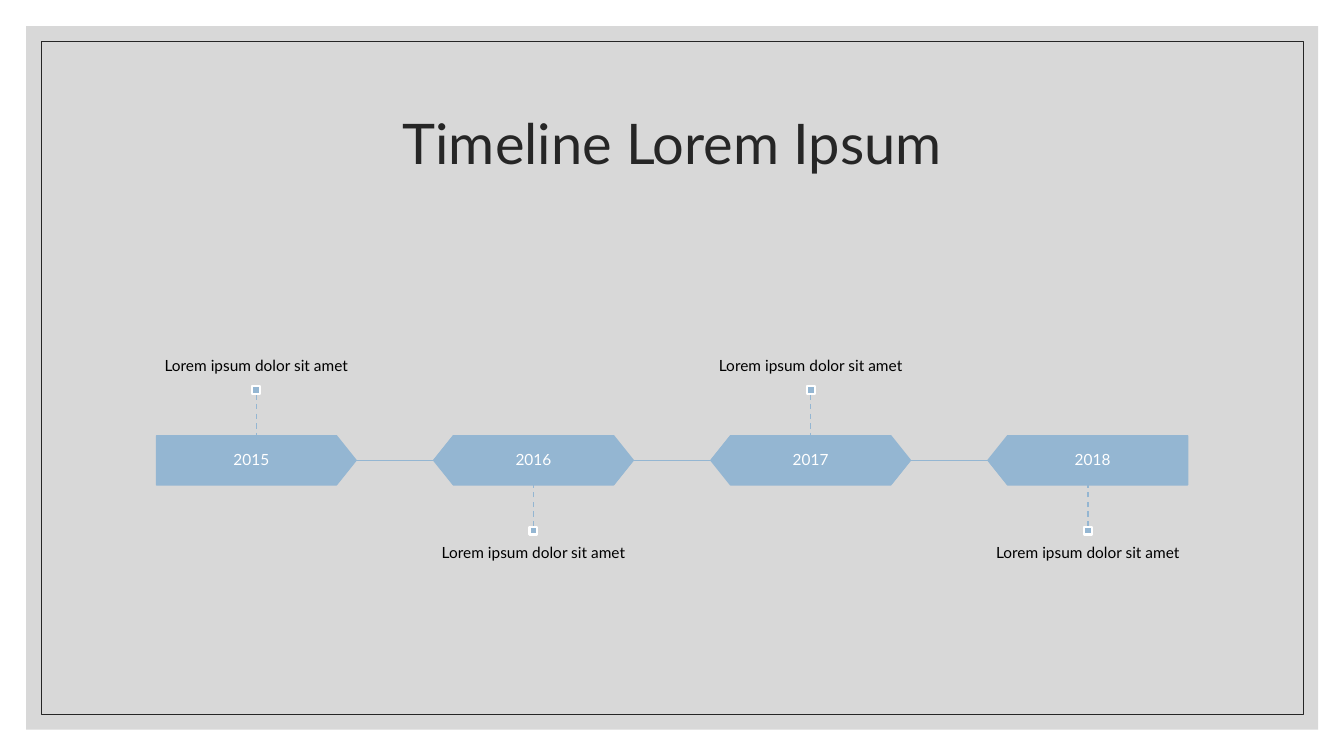
"""Build a four-year timeline slide with labels alternating above and below."""
from lxml import etree
from pptx import Presentation
from pptx.dml.color import RGBColor
from pptx.enum import dml, shapes, text
from pptx.oxml import ns
from pptx.util import Cm, Pt

TITLE = "Timeline Lorem Ipsum"
UP, DOWN = -1, 1
MILESTONES = [
    ("2015", "Lorem ipsum dolor sit amet", UP),
    ("2016", "Lorem ipsum dolor sit amet", DOWN),
    ("2017", "Lorem ipsum dolor sit amet", UP),
    ("2018", "Lorem ipsum dolor sit amet", DOWN),
]
FONT = "Lato"
BLUE, WHITE, BLACK, DARK, GRAY = "94B6D2", "FFFFFF", "000000", "262626", "D8D8D8"

FIRST_CENTER, PITCH, AXIS = 6.46, 6.985, 11.6
BAR_WIDTH, BAR_HEIGHT = 5.03, 1.24
MARKER, MARKER_OFFSET = 0.2, 1.77
LABEL_HEIGHT, LABEL_OFFSET = 3.3, 1.87


def paint(color_format, color):
    color_format.rgb = RGBColor.from_string(color)


def set_line(line, color, width):
    line.width = Pt(width)
    paint(line.color, color)


def add_box(slide, kind, box, fill=None, line=None, width=1):
    shape = slide.shapes.add_shape(kind, *map(Cm, box))
    shape.shadow.inherit = False
    if fill:
        shape.fill.solid()
        paint(shape.fill.fore_color, fill)
    else:
        shape.fill.background()
    if line:
        set_line(shape.line, line, width)
    else:
        shape.line.fill.background()
    return shape


def write(shape, words, size, color, anchor, margin_x, margin_y):
    frame = shape.text_frame
    frame.text = words
    settings = {
        "word_wrap": True, "auto_size": text.MSO_AUTO_SIZE.NONE, "vertical_anchor": anchor,
        "margin_left": Cm(margin_x), "margin_right": Cm(margin_x),
        "margin_top": Cm(margin_y), "margin_bottom": Cm(margin_y),
    }
    for name, value in settings.items():
        setattr(frame, name, value)
    paragraph = frame.paragraphs[0]
    paragraph.alignment = text.PP_ALIGN.CENTER
    paragraph.line_spacing = 0.9
    font = paragraph.runs[0].font
    for name, value in {"name": FONT, "size": Pt(size)}.items():
        setattr(font, name, value)
    paint(font.color, color)


def add_line(slide, start, end, dash=None):
    connector = slide.shapes.add_connector(
        shapes.MSO_CONNECTOR.STRAIGHT, *map(Cm, start + end))
    set_line(connector.line, BLUE, 1)
    if dash:
        connector.line.dash_style = dash
    etree.SubElement(connector._element.spPr, ns.qn("a:effectLst"))


def add_milestone(slide, index, year, label, side):
    center = FIRST_CENTER + index * PITCH
    left = center - BAR_WIDTH / 2
    last = len(MILESTONES) - 1
    kinds = shapes.MSO_SHAPE
    kind = kinds.PENTAGON if index in (0, last) else kinds.HEXAGON
    bar = add_box(slide, kind, (left, AXIS - BAR_HEIGHT / 2, BAR_WIDTH, BAR_HEIGHT), BLUE, BLUE)
    bar.adjustments[0] = 0.4
    if index == last:
        bar._element.spPr.xfrm.set("flipH", "1")
    write(bar, year, 11, WHITE, text.MSO_ANCHOR.MIDDLE, 0.23, 0.23)
    if index < last:
        add_line(slide, (left + BAR_WIDTH, AXIS), (left + PITCH, AXIS))

    marker_middle = AXIS + side * MARKER_OFFSET
    add_line(slide, (center, marker_middle - side * MARKER / 2),
             (center, AXIS + side * BAR_HEIGHT / 2), dml.MSO_LINE.DASH)
    add_box(slide, kinds.RECTANGLE,
            (center - MARKER / 2, marker_middle - MARKER / 2, MARKER, MARKER), BLUE, WHITE, 1.5)

    label_edge = AXIS + side * LABEL_OFFSET
    label_top = label_edge - LABEL_HEIGHT if side == UP else label_edge
    box = slide.shapes.add_textbox(
        *map(Cm, (center - PITCH / 2, label_top, PITCH, LABEL_HEIGHT)))
    anchor = text.MSO_ANCHOR.BOTTOM if side == UP else text.MSO_ANCHOR.TOP
    write(box, label, 11, BLACK, anchor, 0, 0.28)


def main():
    presentation = Presentation()
    presentation.slide_width, presentation.slide_height = Cm(33.87), Cm(19.05)
    slide = presentation.slides.add_slide(presentation.slide_layouts[5])

    rectangle = shapes.MSO_SHAPE.RECTANGLE
    add_box(slide, rectangle, (0.66, 0.66, 32.56, 17.73), fill=GRAY)
    add_box(slide, rectangle, (1.04, 1.04, 31.8, 16.97), line=DARK, width=0.5)

    title = slide.shapes.title
    slide.shapes._spTree.append(title._element)
    frame = {"left": 2.97, "top": 1.78, "width": 27.94, "height": 3.81}
    for name, value in frame.items():
        setattr(title, name, Cm(value))
    write(title, TITLE, 40, DARK, text.MSO_ANCHOR.MIDDLE, 0.25, 0.13)

    for index, milestone in enumerate(MILESTONES):
        add_milestone(slide, index, *milestone)
    presentation.save("out.pptx")


if __name__ == "__main__":
    main()
